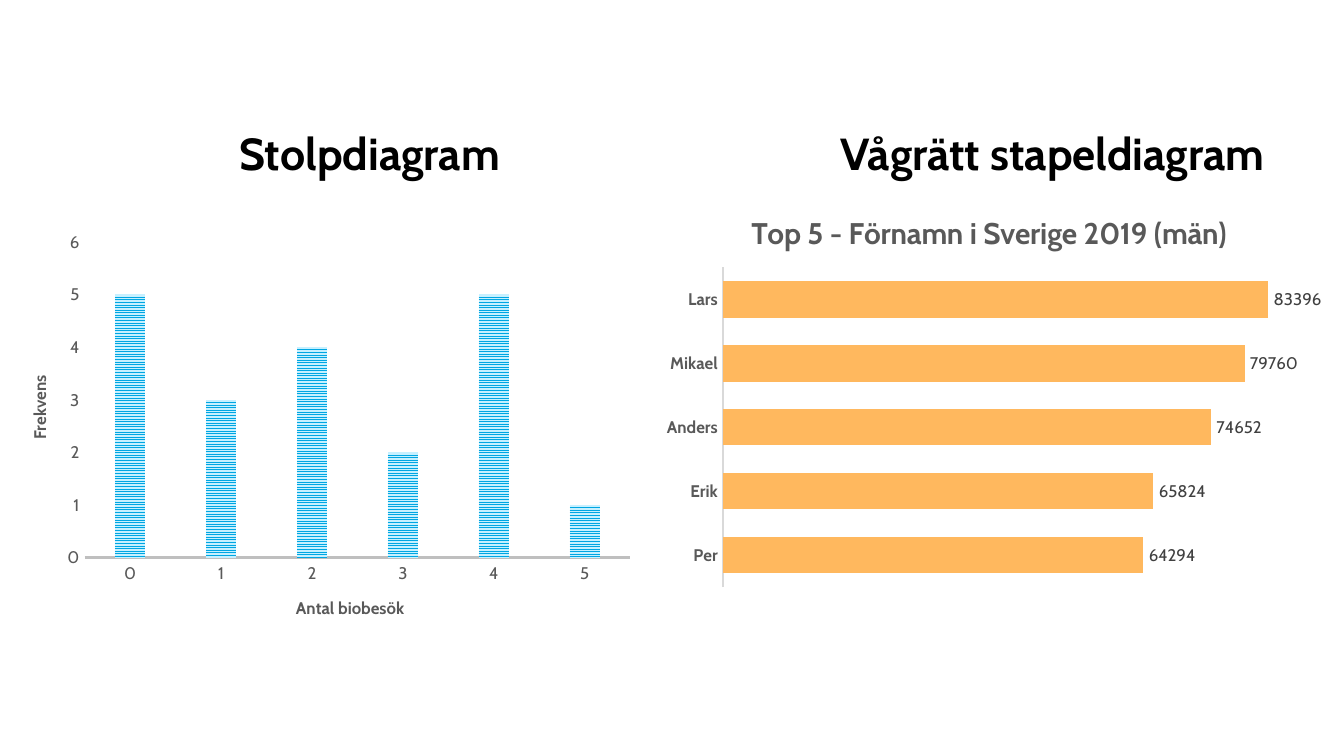
from dataclasses import dataclass

from lxml import etree
from pptx import Presentation
from pptx.chart import data
from pptx.dml import color
from pptx.enum import chart as ch, dml, text
from pptx.oxml import ns
from pptx.util import Inches, Pt


@dataclass(frozen=True)
class Theme:
    font: str = "Cabin"
    black: str = "000000"
    gray: str = "595959"
    dark: str = "404040"
    rule: str = "D9D9D9"
    base: str = "BFBFBF"
    orange: str = "FFB85E"
    blue: str = "00A6E2"
    pale: str = "C6F0FF"
    head: int = 24
    title: int = 16
    chart: int = 10
    small: int = 9


def rgb(value):
    return color.RGBColor.from_string(value)


class Deck:
    def __init__(self, theme):
        self.theme = theme
        self.prs = Presentation()
        self.prs.slide_width = Inches(10)
        self.prs.slide_height = Inches(10) * 9 // 16
        self.slide = self.prs.slides.add_slide(self.prs.slide_layouts[4])

    def style(self, font, size, tint, bold=False):
        font.name = self.theme.font
        font.size = Pt(size)
        font.bold = bold
        font.color.rgb = rgb(tint)

    def place(self, parent, area, spot, inner=False):
        layout = parent.find(ns.qn("c:layout"))
        if layout is None:
            layout = etree.Element(ns.qn("c:layout"))
            parent.insert(0, layout)
        manual = etree.SubElement(layout, ns.qn("c:manualLayout"))
        items = {"layoutTarget": "inner"} if inner else {}
        items.update(xMode="edge", yMode="edge")
        for tag, value, full in zip("xywh", spot, area[2:] * 2):
            items[tag] = value / full
        for tag, value in items.items():
            etree.SubElement(manual, ns.qn(f"c:{tag}")).set("val", str(value))

    def head(self, index, words, left):
        box = self.slide.placeholders[index]
        box.left, box.top = Inches(left), Inches(0.93)
        box.width, box.height = Inches(4.22), Inches(0.56)
        frame = box.text_frame
        frame.text = words
        frame.auto_size = text.MSO_AUTO_SIZE.NONE
        frame.vertical_anchor = text.MSO_ANCHOR.TOP
        para = frame.paragraphs[0]
        para.alignment = text.PP_ALIGN.CENTER
        para.line_spacing = 0.9
        para.space_before = Pt(0)
        self.style(para.runs[0].font, self.theme.head, self.theme.black, True)

    def title(self, owner, words, size):
        title = owner.axis_title if hasattr(owner, "axis_title") else owner.chart_title
        title.text_frame.text = words
        run = title.text_frame.paragraphs[0].runs[0]
        self.style(run.font, size, self.theme.gray, True)
        return title

    def chart(self, kind, cats, vals, area, plot, top, gap):
        source = data.CategoryChartData()
        source.categories = cats
        source.add_series("Series 1", vals)
        spot = [Inches(n) for n in area]
        chart = self.slide.shapes.add_chart(kind, *spot, source).chart
        self.style(chart.font, self.theme.chart, self.theme.black)
        chart.has_legend = False
        chart.has_title = False
        self.place(chart._chartSpace.chart.plotArea, area, plot, True)
        bars = chart.plots[0]
        bars.gap_width = gap
        bars.vary_by_categories = False
        axis = chart.value_axis
        axis.minimum_scale, axis.maximum_scale = 0, top
        axis.has_major_gridlines = False
        return chart

    def axis(self, axis, line=None, width=1, bold=False):
        axis.major_tick_mark = ch.XL_TICK_MARK.NONE
        axis.minor_tick_mark = ch.XL_TICK_MARK.NONE
        self.style(axis.tick_labels.font, self.theme.small, self.theme.gray, bold)
        if line:
            axis.format.line.color.rgb = rgb(line)
            axis.format.line.width = Pt(width)
        else:
            axis.format.line.fill.background()

    def column(self):
        area = (0, 1.66, 4.78, 3.15)
        chart = self.chart(
            ch.XL_CHART_TYPE.COLUMN_CLUSTERED,
            ["0", "1", "2", "3", "4", "5"], [5, 3, 4, 2, 5, 1],
            area, (0.63, 0.14, 4.06, 2.35), 6, 200)
        chart.plots[0].overlap = -22
        chart.value_axis.major_unit = 1
        self.axis(chart.category_axis, self.theme.base, 1.5)
        self.axis(chart.value_axis)
        for axis, words, spot in (
            (chart.category_axis, "Antal biobesök", (2.18, 2.75)),
            (chart.value_axis, "Frekvens", (0.18, 1.11)),
        ):
            title = self.title(axis, words, self.theme.small)
            self.place(title._element, area, spot)
        fill = chart.series[0].format.fill
        fill.patterned()
        fill.pattern = dml.MSO_PATTERN.NARROW_HORIZONTAL
        fill.fore_color.rgb = rgb(self.theme.blue)
        fill.back_color.rgb = rgb(self.theme.pale)

    def bar(self):
        chart = self.chart(
            ch.XL_CHART_TYPE.BAR_CLUSTERED,
            ["Per", "Erik", "Anders", "Mikael", "Lars"],
            [64294, 65824, 74652, 79760, 83396],
            (4.86, 1.43, 5, 3), (0.52, 0.56, 4.38, 2.38), 90000, 75)
        self.title(chart, "Top 5 - Förnamn i Sverige 2019 (män)", self.theme.title)
        self.axis(chart.category_axis, self.theme.rule, bold=True)
        chart.value_axis.visible = False
        series = chart.series[0]
        series.format.fill.solid()
        series.format.fill.fore_color.rgb = rgb(self.theme.orange)
        labels = series.data_labels
        labels.show_value = True
        labels.position = ch.XL_LABEL_POSITION.OUTSIDE_END
        self.style(labels.font, self.theme.small, self.theme.dark)

    def save(self):
        for box in list(self.slide.placeholders):
            if not box.has_text_frame or not box.text_frame.text:
                box.element.getparent().remove(box.element)
        self.prs.save("out.pptx")


def main():
    deck = Deck(Theme())
    deck.head(0, "Stolpdiagram", 0.64)
    deck.head(1, "Vågrätt stapeldiagram", 5.72)
    deck.bar()
    deck.column()
    deck.save()


if __name__ == "__main__":
    main()
